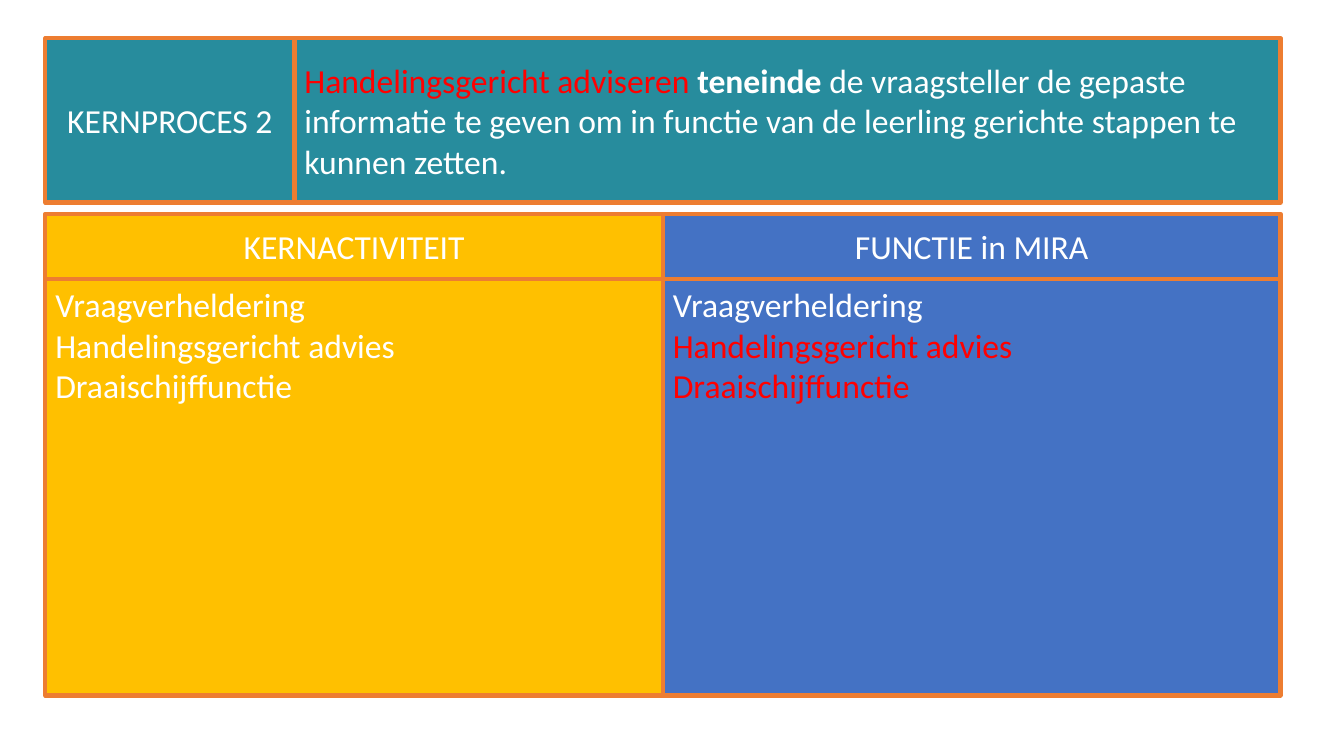
from pptx import Presentation
from pptx.dml.color import RGBColor
from pptx.enum.shapes import MSO_SHAPE
from pptx.enum.text import MSO_ANCHOR, PP_ALIGN
from pptx.util import Inches, Pt

RECT = MSO_SHAPE.RECTANGLE
TOP, MIDDLE = MSO_ANCHOR.TOP, MSO_ANCHOR.MIDDLE
LEFT, CENTER = PP_ALIGN.LEFT, PP_ALIGN.CENTER

COLORS = {"teal": "278C9D", "yellow": "FFC000", "blue": "4472C4",
          "border": "ED7D31", "text": "FFFFFF", "accent": "FF0000"}


def rgb(name):
    return RGBColor.from_string(COLORS[name])


def add_box(s, box, fill, paragraphs, align=LEFT, anchor=MIDDLE):
    """Bordered rectangle; each paragraph is a list of (text, color, bold) runs."""
    sp = s.shapes.add_shape(RECT, *(Inches(v) for v in box))
    sp.shadow.inherit = False
    sp.fill.solid()
    sp.fill.fore_color.rgb = rgb(fill)
    sp.line.color.rgb = rgb("border")
    sp.line.width = Pt(3)
    tf = sp.text_frame
    tf.word_wrap = True
    tf.vertical_anchor = anchor
    for i, runs in enumerate(paragraphs):
        p = tf.add_paragraph() if i else tf.paragraphs[0]
        p.alignment = align
        p.font.name = "Calibri"
        p.font.size = Pt(24)
        for text, color, bold in runs:
            r = p.add_run()
            r.text = text
            r.font.color.rgb = rgb(color)
            r.font.bold = bold


def add_process(s, box, label, description):
    """Core process: label on the left, description on the right."""
    left, top, width, height = box
    label_w = 2.47
    add_box(s, (left + label_w, top, width - label_w, height), "teal", [description])
    add_box(s, (left, top, label_w, height), "teal",
            [[(label, "text", False)]], align=CENTER)


def add_column(s, box, fill, heading, items):
    """Heading box with a list box below it."""
    left, top, width, height = box
    head_h = 0.65
    add_box(s, (left, top, width, head_h), fill,
            [[(heading, "text", False)]], align=CENTER)
    add_box(s, (left, top + head_h, width, height - head_h), fill,
            [[(text, color, False)] for text, color in items], anchor=TOP)


def main():
    prs = Presentation()
    prs.slide_width, prs.slide_height = Inches(13.33), Inches(7.5)
    s = prs.slides.add_slide(prs.slide_layouts[6])

    left, width = 0.45, 12.25

    # Core process
    add_process(s, (left, 0.38, width, 1.63), "KERNPROCES 2", [
        ("Handelingsgericht adviseren ", "accent", False),
        ("teneinde", "text", True),
        (" de vraagsteller de gepaste informatie te geven om in functie van "
         "de leerling gerichte stappen te kunnen zetten.", "text", False)])

    # Activities and functions
    items = ["Vraagverheldering", "Handelingsgericht advies", "Draaischijffunctie"]
    columns = [("yellow", "KERNACTIVITEIT", ["text", "text", "text"]),
               ("blue", "FUNCTIE in MIRA", ["text", "accent", "accent"])]
    col_w = width / len(columns)
    for i, (fill, heading, colors) in enumerate(columns):
        add_column(s, (left + i * col_w, 2.12, col_w, 4.78), fill, heading,
                   zip(items, colors))

    prs.save("out.pptx")


if __name__ == "__main__":
    main()
